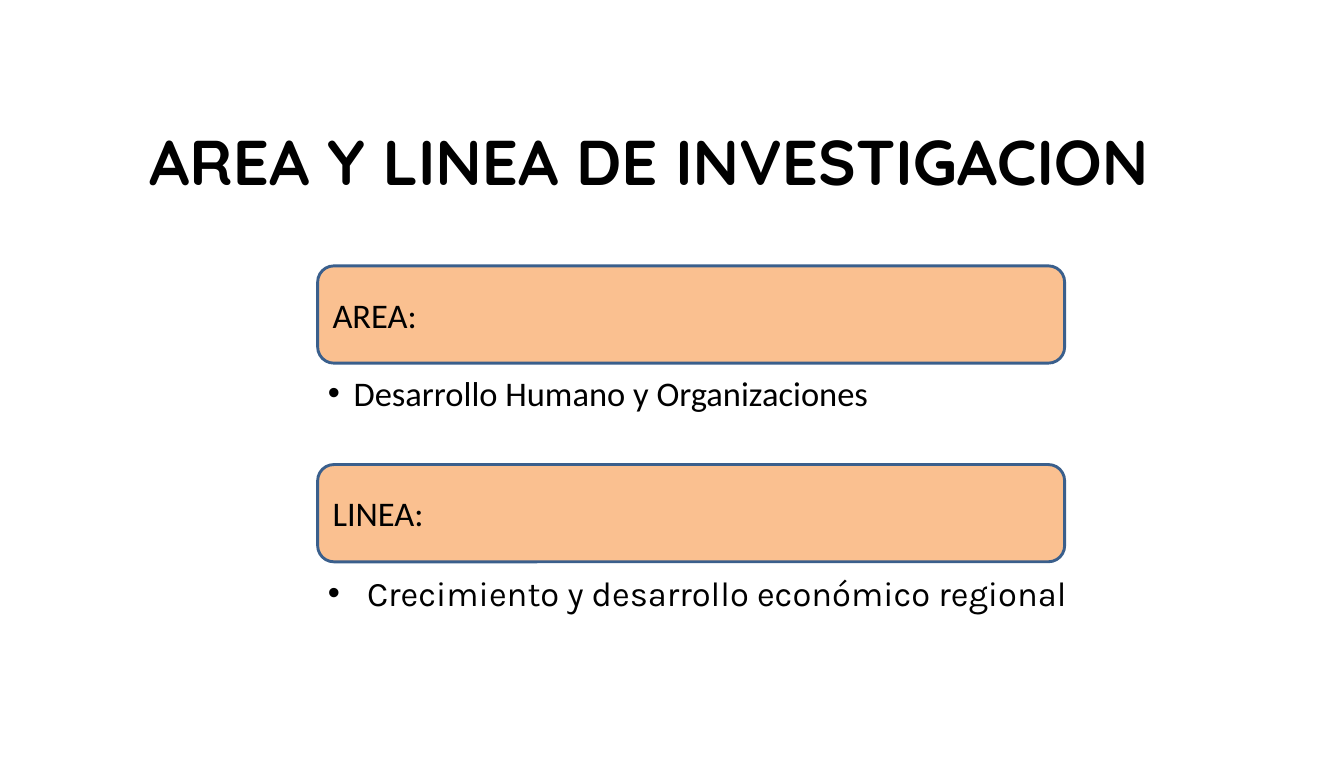
from lxml import etree
from pptx import Presentation
from pptx.dml.color import RGBColor
from pptx.enum import shapes, text
from pptx.oxml import ns
from pptx.util import Inches, Pt

BLACK = RGBColor(0x00, 0x00, 0x00)
PEACH = RGBColor(0xFA, 0xC0, 0x90)
BLUE = RGBColor(0x3A, 0x5F, 0x8C)
LEFT = 3.07

deck = Presentation()
deck.slide_width, deck.slide_height = Inches(12.99), Inches(7.5)
slide = deck.slides.add_slide(deck.slide_layouts[6])


def write(shape, words, face, size=24, bold=False, align=text.PP_ALIGN.LEFT,
          anchor=text.MSO_ANCHOR.MIDDLE, indent=0):
    """Fill a shape with one paragraph, bulleted when an indent is given."""
    frame = shape.text_frame
    frame.word_wrap = True
    frame.vertical_anchor = anchor
    para = frame.paragraphs[0]
    para.text = words
    para.alignment = align
    if indent:
        props = para._p.get_or_add_pPr()
        props.set("marL", str(Inches(indent)))
        props.set("indent", str(-Inches(indent)))
        etree.SubElement(props, ns.qn("a:buFont")).set("typeface", "Arial")
        etree.SubElement(props, ns.qn("a:buChar")).set("char", "•")
    font = para.runs[0].font
    for key, value in {"name": face, "size": Pt(size), "bold": bold}.items():
        setattr(font, key, value)
    font.color.rgb = BLACK
    return para


title = slide.shapes.add_textbox(Inches(0.43), Inches(0.92), Inches(11.69), Inches(1.25))
write(title, "AREA Y LINEA DE INVESTIGACION", "Quicksand", 44, True, text.PP_ALIGN.CENTER)

topics = [
    (2.57, "AREA:", 3.59, "Desarrollo Humano y Organizaciones", "Calibri", 0.25, 0.9),
    (4.49, "LINEA:", 5.48, "Crecimiento y desarrollo económico regional", "Karla", 0.38, 1.0),
]
for top, label, low, detail, face, indent, spacing in topics:
    bar = slide.shapes.add_shape(shapes.MSO_SHAPE.ROUNDED_RECTANGLE,
                                 Inches(LEFT), Inches(top), Inches(7.22), Inches(0.94))
    bar.shadow.inherit = False
    bar.fill.solid()
    bar.fill.fore_color.rgb = PEACH
    bar.line.color.rgb = BLUE
    bar.line.width = Pt(2)
    write(bar, label, "Calibri")

    note = slide.shapes.add_textbox(Inches(LEFT), Inches(low), Inches(9), Inches(0.52))
    para = write(note, detail, face, anchor=text.MSO_ANCHOR.TOP, indent=indent)
    para.line_spacing = spacing

deck.save("out.pptx")
